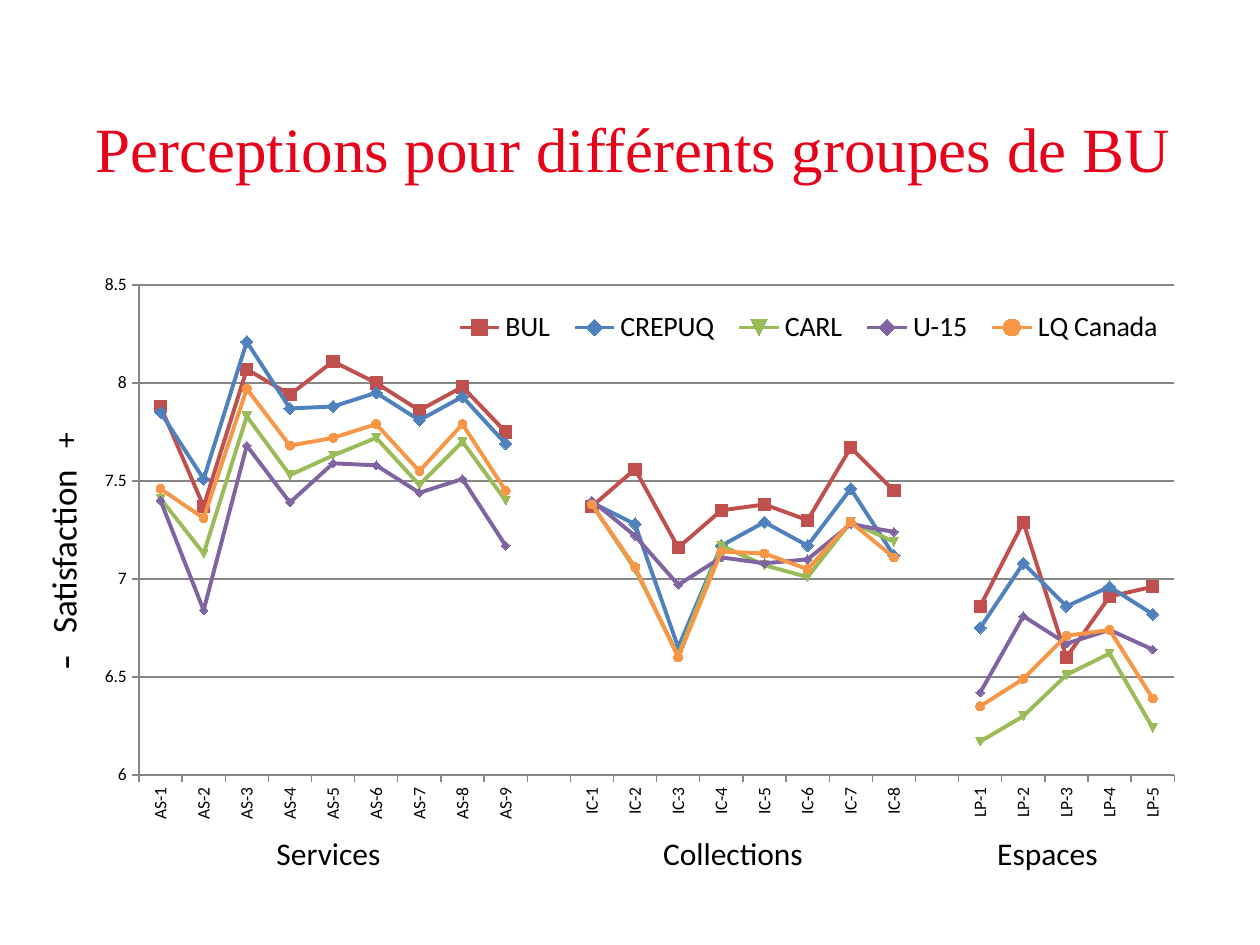
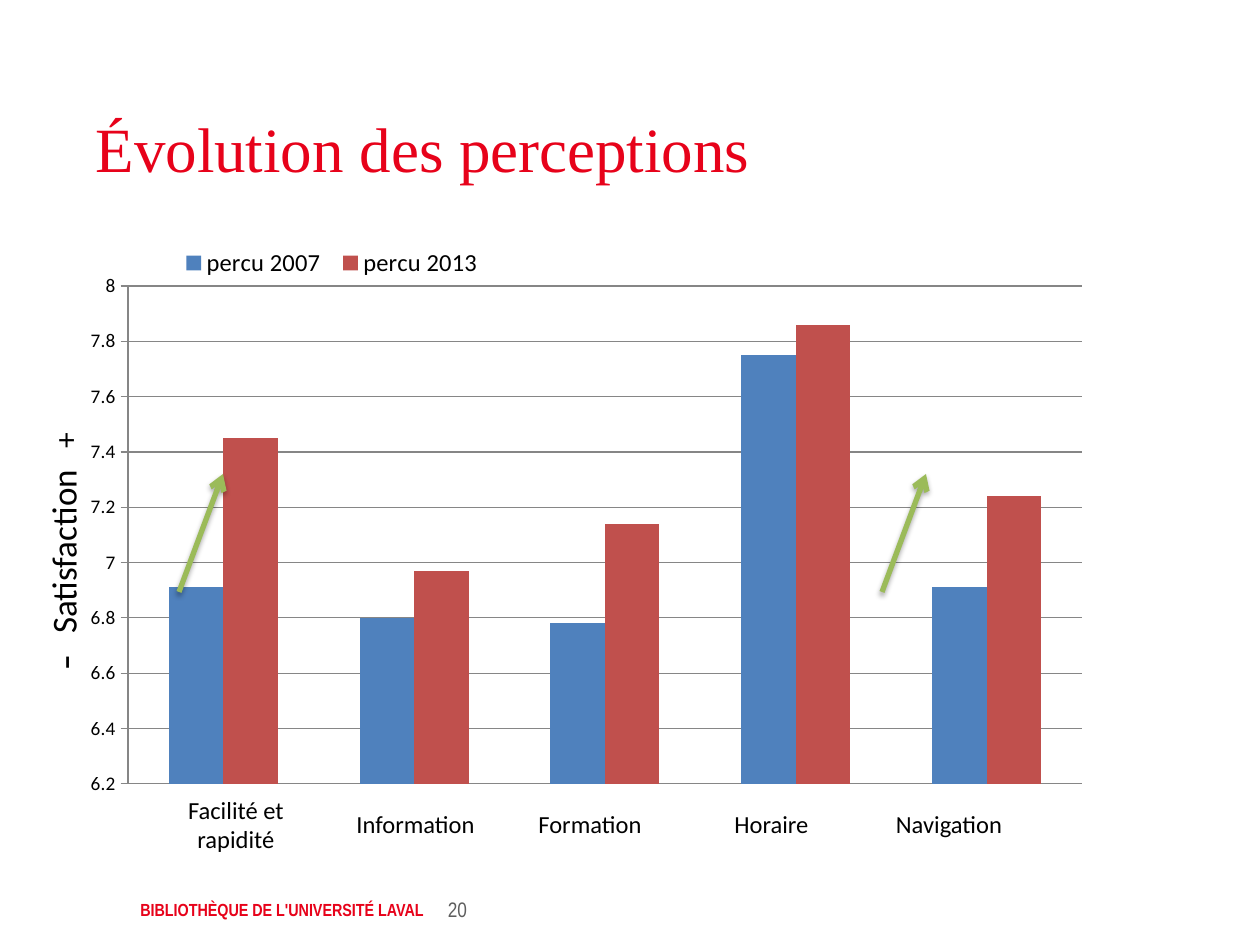
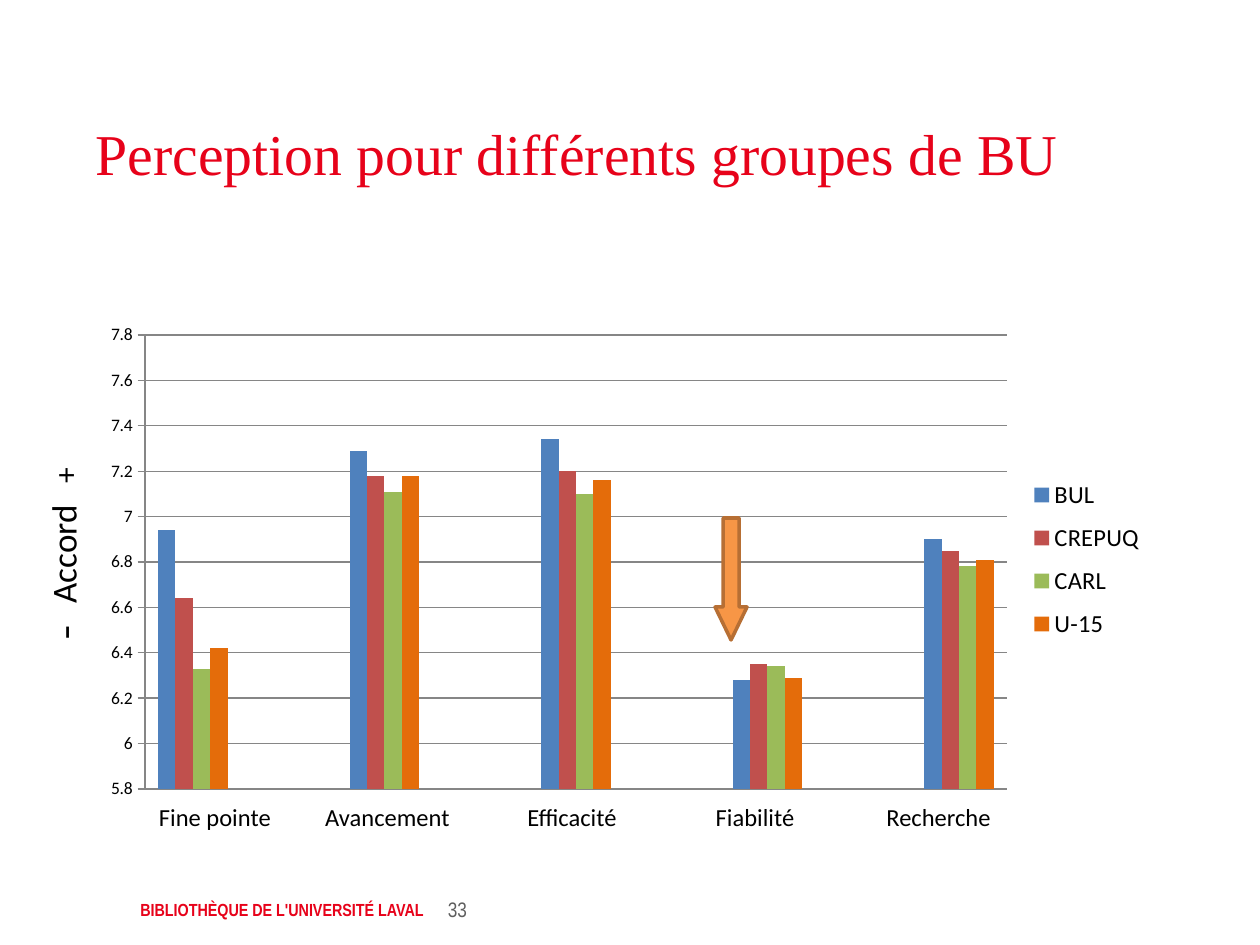
from lxml import etree
from pptx import Presentation
from pptx.chart.data import CategoryChartData
from pptx.dml.color import RGBColor
from pptx.enum.chart import XL_CHART_TYPE, XL_LEGEND_POSITION, XL_MARKER_STYLE, XL_TICK_MARK
from pptx.enum.shapes import MSO_CONNECTOR, MSO_SHAPE
from pptx.enum.text import MSO_ANCHOR, MSO_AUTO_SIZE, PP_ALIGN
from pptx.oxml.ns import qn
from pptx.util import Emu, Pt

EMU_PER_PX = 914400 / 126
TITLE_ONLY = 5

LINES, COLUMNS = XL_CHART_TYPE.LINE_MARKERS, XL_CHART_TYPE.COLUMN_CLUSTERED
BOTTOM, TOP, RIGHT = XL_LEGEND_POSITION.BOTTOM, XL_LEGEND_POSITION.TOP, XL_LEGEND_POSITION.RIGHT
SQUARE, DIAMOND, CIRCLE = XL_MARKER_STYLE.SQUARE, XL_MARKER_STYLE.DIAMOND, XL_MARKER_STYLE.CIRCLE
AUTO_MARKER = XL_MARKER_STYLE.AUTOMATIC
TICK_OUT, TICK_NONE = XL_TICK_MARK.OUTSIDE, XL_TICK_MARK.NONE
LEFT, CENTER = PP_ALIGN.LEFT, PP_ALIGN.CENTER
ANCHOR_TOP, ANCHOR_MIDDLE = MSO_ANCHOR.TOP, MSO_ANCHOR.MIDDLE

COLORS = {
    "title": "E7021A", "text": "000000", "page": "5E5E5E", "grid": "868686",
    "blue": "4F81BD", "red": "C0504D", "green": "9BBB59", "purple": "8064A2",
    "orange": "F79646", "dark_orange": "E46C0A", "arrow_edge": "B76F34",
}

BODY = {"name": "Calibri", "size": 14, "bold": False, "color": "text"}
TITLE = {"name": "Times New Roman", "size": 36, "bold": False, "color": "title"}
FOOTER = {"name": "Arial Narrow", "size": 10, "bold": True, "color": "title"}
PAGE = {"name": "Arial Narrow", "size": 12, "bold": False, "color": "page"}

TITLE_BOX = (83, 103, 1110, 118)

# Chart data: (name, color, values)
PERCEPTION_CATEGORIES = (
    [f"AS-{n}" for n in range(1, 10)] + [""]
    + [f"IC-{n}" for n in range(1, 9)] + [""]
    + [f"LP-{n}" for n in range(1, 6)]
)
PERCEPTION_SERIES = [
    ("BUL", "red", [7.88, 7.37, 8.07, 7.94, 8.11, 8, 7.86, 7.98, 7.75, None,
                    7.37, 7.56, 7.16, 7.35, 7.38, 7.3, 7.67, 7.45, None,
                    6.86, 7.29, 6.6, 6.91, 6.96]),
    ("CREPUQ", "blue", [7.85, 7.51, 8.21, 7.87, 7.88, 7.95, 7.81, 7.93, 7.69, None,
                        7.39, 7.28, 6.65, 7.17, 7.29, 7.17, 7.46, 7.12, None,
                        6.75, 7.08, 6.86, 6.96, 6.82]),
    ("CARL", "green", [7.41, 7.13, 7.83, 7.53, 7.63, 7.72, 7.48, 7.7, 7.4, None,
                       7.38, 7.05, 6.61, 7.17, 7.07, 7.01, 7.29, 7.19, None,
                       6.17, 6.3, 6.51, 6.62, 6.24]),
    ("U-15", "purple", [7.4, 6.84, 7.68, 7.39, 7.59, 7.58, 7.44, 7.51, 7.17, None,
                        7.4, 7.22, 6.97, 7.11, 7.08, 7.1, 7.28, 7.24, None,
                        6.42, 6.81, 6.67, 6.74, 6.64]),
    ("LQ Canada", "orange", [7.46, 7.31, 7.97, 7.68, 7.72, 7.79, 7.55, 7.79, 7.45, None,
                             7.38, 7.06, 6.6, 7.14, 7.13, 7.05, 7.29, 7.11, None,
                             6.35, 6.49, 6.71, 6.74, 6.39]),
]
MARKERS = [(SQUARE, 7), (DIAMOND, 7), (AUTO_MARKER, 5), (DIAMOND, 5), (CIRCLE, 5)]

EVOLUTION_SERIES = [
    ("percu 2007", "blue", [6.91, 6.8, 6.78, 7.75, 6.91]),
    ("percu 2013", "red", [7.45, 6.97, 7.14, 7.86, 7.24]),
]
GROUP_SERIES = [
    ("BUL", "blue", [6.94, None, 7.29, None, 7.34, None, 6.28, None, 6.9]),
    ("CREPUQ", "red", [6.64, None, 7.18, None, 7.2, None, 6.35, None, 6.85]),
    ("CARL", "green", [6.33, None, 7.11, None, 7.1, None, 6.34, None, 6.78]),
    ("U-15", "dark_orange", [6.42, None, 7.18, None, 7.16, None, 6.29, None, 6.81]),
]


def px(length):
    return Emu(round(length * EMU_PER_PX))


def place(box):
    return [px(length) for length in box]


def rgb(name):
    return RGBColor.from_string(COLORS[name])


def set_font(font, style, **changes):
    for key, value in {**style, **changes}.items():
        if key == "color":
            font.color.rgb = rgb(value)
        else:
            setattr(font, key, Pt(value) if key == "size" else value)


def add_effects(shape):
    return etree.SubElement(shape._element.spPr, qn("a:effectLst"))


# Text parts
def add_text(slide, box, text, style, align=LEFT, anchor=ANCHOR_MIDDLE, wrap=True):
    shape = slide.shapes.add_textbox(*place(box))
    frame = shape.text_frame
    frame.word_wrap, frame.vertical_anchor = wrap, anchor
    paragraph = frame.paragraphs[0]
    paragraph.alignment = align
    run = paragraph.add_run()
    run.text = text
    set_font(run.font, style)


def add_titled_slide(presentation, text, box=TITLE_BOX, size=36, line_spacing=1.0):
    slide = presentation.slides.add_slide(presentation.slide_layouts[TITLE_ONLY])
    title = slide.shapes.title
    title.left, title.top, title.width, title.height = place(box)
    frame = title.text_frame
    frame.text = text
    settings = {"auto_size": MSO_AUTO_SIZE.NONE, "word_wrap": True,
                "vertical_anchor": ANCHOR_TOP, "margin_top": px(7)}
    for key, value in settings.items():
        setattr(frame, key, value)
    paragraph = frame.paragraphs[0]
    paragraph.alignment, paragraph.line_spacing = LEFT, line_spacing
    set_font(paragraph.runs[0].font, TITLE, size=size)
    return slide


def add_footer(slide, page):
    add_text(slide, (128, 892, 400, 34), "BIBLIOTHÈQUE DE L'UNIVERSITÉ LAVAL", FOOTER)
    add_text(slide, (426, 892, 63, 34), page, PAGE, CENTER)


def add_category_labels(slide, top, height, labels, size=14):
    for text, left, width in labels:
        add_text(slide, (left, top, width, height), text, {**BODY, "size": size},
                 CENTER, wrap=" " in text)


def add_axis_title(slide, text, bottom, plus_stop):
    """Vertical scale name between a minus and a plus sign, read upwards from bottom."""
    length, height, center = 320, 43, 57
    box = (center - length / 2, bottom - (length + height) / 2, length, height)
    shape = slide.shapes.add_textbox(*place(box))
    shape.rotation = 270
    shape.text_frame.word_wrap = True
    paragraph = shape.text_frame.paragraphs[0]
    paragraph.alignment = LEFT
    tabs = etree.SubElement(paragraph._p.get_or_add_pPr(), qn("a:tabLst"))
    for stop in (37, plus_stop):
        etree.SubElement(tabs, qn("a:tab"), pos=str(px(stop)), algn="l")
    for part, size, bold in (("–\t", 18, True), (text, 20, False), ("\t+", 18, False)):
        run = paragraph.add_run()
        run.text = part
        set_font(run.font, BODY, size=size, bold=bold)


# Charts
def make_layout(box, chart_box, inner=False):
    """Manual layout of a region as fractions of its chart."""
    left, top, width, height = chart_box
    fractions = {"x": (box[0] - left) / width, "y": (box[1] - top) / height,
                 "w": box[2] / width, "h": box[3] / height}
    layout = etree.Element(qn("c:layout"))
    manual = etree.SubElement(layout, qn("c:manualLayout"))
    if inner:
        etree.SubElement(manual, qn("c:layoutTarget"), val="inner")
    for key in "xy":
        etree.SubElement(manual, qn(f"c:{key}Mode"), val="edge")
    for key, fraction in fractions.items():
        etree.SubElement(manual, qn(f"c:{key}"), val=f"{fraction:.4f}")
    return layout


def add_scaled_chart(slide, kind, box, plot_box, categories, series, scale, tick_size=10):
    data = CategoryChartData()
    data.categories = categories
    for name, _, values in series:
        data.add_series(name, values)
    chart = slide.shapes.add_chart(kind, *place(box), data).chart
    chart.has_title = False
    set_font(chart.font, BODY, size=10)
    plot_area = chart._chartSpace.xpath("c:chart/c:plotArea")[0]
    for old_layout in plot_area.findall(qn("c:layout")):
        plot_area.remove(old_layout)
    plot_area.insert(0, make_layout(plot_box, box, inner=True))

    axis = chart.value_axis
    settings = dict(zip(("minimum_scale", "maximum_scale", "major_unit"), scale))
    settings.update(has_major_gridlines=True, major_tick_mark=TICK_OUT, minor_tick_mark=TICK_NONE)
    for key, value in settings.items():
        setattr(axis, key, value)
    set_font(axis.tick_labels.font, BODY, size=tick_size)
    for line in (axis.format.line, axis.major_gridlines.format.line):
        line.color.rgb, line.width = rgb("grid"), Pt(0.75)
    chart.plots[0].vary_by_categories = False
    return chart


def add_legend(chart, chart_box, position, box, size):
    chart.has_legend = True
    legend = chart.legend
    legend.position, legend.include_in_layout = position, False
    set_font(legend.font, BODY, size=size)
    element = legend._element
    for old_layout in element.findall(qn("c:layout")):
        element.remove(old_layout)
    element.find(qn("c:overlay")).addprevious(make_layout(box, chart_box))


def add_line_chart(slide, box, plot_box, categories, series, scale):
    chart = add_scaled_chart(slide, LINES, box, plot_box, categories, series, scale)
    axis = chart.category_axis
    axis.major_tick_mark, axis.minor_tick_mark = TICK_OUT, TICK_NONE
    axis.format.line.color.rgb = rgb("grid")
    set_font(axis.tick_labels.font, BODY, size=10)
    axis._element.find(qn("c:txPr")).find(qn("a:bodyPr")).set("rot", "-5400000")
    for item, (_, color, _), (style, size) in zip(chart.plots[0].series, series, MARKERS):
        item.smooth = False
        item.format.line.color.rgb, item.format.line.width = rgb(color), Pt(2.25)
        item.marker.style, item.marker.size = style, size
        item.marker.format.fill.solid()
        item.marker.format.fill.fore_color.rgb = rgb(color)
        item.marker.format.line.color.rgb = rgb(color)
    return chart


def add_column_chart(slide, box, plot_box, series, scale, tick_size=10):
    categories = [str(n + 1) for n in range(len(series[0][2]))]
    chart = add_scaled_chart(slide, COLUMNS, box, plot_box, categories, series, scale, tick_size)
    chart.category_axis.visible = False
    plot = chart.plots[0]
    plot.gap_width, plot.overlap = 150, 0
    for item, (_, color, _) in zip(plot.series, series):
        item.format.fill.solid()
        item.format.fill.fore_color.rgb = rgb(color)
    return chart


# Arrows
def add_rise_arrow(slide, left):
    arrow = slide.shapes.add_connector(MSO_CONNECTOR.STRAIGHT, *place((left, 592, left + 44, 474)))
    arrow.line.color.rgb, arrow.line.width = rgb("green"), Pt(3)
    etree.SubElement(arrow.line._get_or_add_ln(), qn("a:tailEnd"), type="arrow")
    shadow = etree.SubElement(add_effects(arrow), qn("a:outerShdw"), blurRad=str(Pt(3.1)),
                              dist=str(Pt(1.8)), dir="5400000", rotWithShape="0")
    color = etree.SubElement(shadow, qn("a:srgbClr"), val=COLORS["text"])
    etree.SubElement(color, qn("a:alpha"), val="35000")


def add_drop_arrow(slide, box):
    arrow = slide.shapes.add_shape(MSO_SHAPE.RIGHT_ARROW, *place(box))
    arrow.rotation = 90
    arrow.shadow.inherit = False
    arrow.adjustments[0], arrow.adjustments[1] = 0.5, 1.03
    arrow.fill.solid()
    arrow.fill.fore_color.rgb = rgb("orange")
    arrow.line.color.rgb, arrow.line.width = rgb("arrow_edge"), Pt(2)


# Slides
def build_perceptions(presentation):
    slide = add_titled_slide(presentation, "Perceptions pour différents groupes de BU")
    box = (35, 262, 1140, 643)
    chart = add_line_chart(slide, box, (139, 285, 1036, 490), PERCEPTION_CATEGORIES,
                           PERCEPTION_SERIES, (6, 8.5, 0.5))
    add_legend(chart, box, BOTTOM, (444, 305, 730, 45), 16)
    add_category_labels(slide, 828, 50, [("Services", 263, 131), ("Collections", 649, 168),
                                         ("Espaces", 984, 127)], size=18)
    add_axis_title(slide, "Satisfaction", 683, 222)


def build_evolution(presentation):
    slide = add_titled_slide(presentation, "Évolution des perceptions")
    box = (43, 234, 1068, 619)
    chart = add_column_chart(slide, box, (128, 286, 954, 498), EVOLUTION_SERIES,
                             (6.2, 8, 0.2), tick_size=11)
    add_legend(chart, box, TOP, (172, 246, 320, 34), 14)
    add_footer(slide, "20")
    add_category_labels(slide, 788, 72, [
        ("Facilité et rapidité", 166, 140), ("Information", 343, 145), ("Formation", 525, 130),
        ("Horaire", 721, 101), ("Navigation", 882, 134)])
    for left in (179, 882):
        add_rise_arrow(slide, left)
    add_axis_title(slide, "Satisfaction", 683, 222)


def build_groups(presentation):
    slide = add_titled_slide(presentation, "Perception pour différents groupes de BU",
                             (83, 97, 1121, 155), size=33, line_spacing=1.2)
    box = (57, 243, 1118, 607)
    chart = add_column_chart(slide, box, (145, 335, 862, 454), GROUP_SERIES, (5.8, 7.8, 0.2))
    add_legend(chart, box, RIGHT, (1022, 467, 130, 185), 14)
    add_category_labels(slide, 795, 43, [
        ("Fine pointe", 145, 140), ("Avancement", 312, 151), ("Efficacité", 514, 116),
        ("Fiabilité", 703, 104), ("Recherche", 873, 131)])
    add_footer(slide, "33")
    add_axis_title(slide, "Accord", 653, 157)
    add_drop_arrow(slide, (670, 563, 122, 32))


def main():
    presentation = Presentation()
    presentation.slide_width, presentation.slide_height = px(1260), px(945)
    for build in (build_perceptions, build_evolution, build_groups):
        build(presentation)
    presentation.save("out.pptx")


if __name__ == "__main__":
    main()
